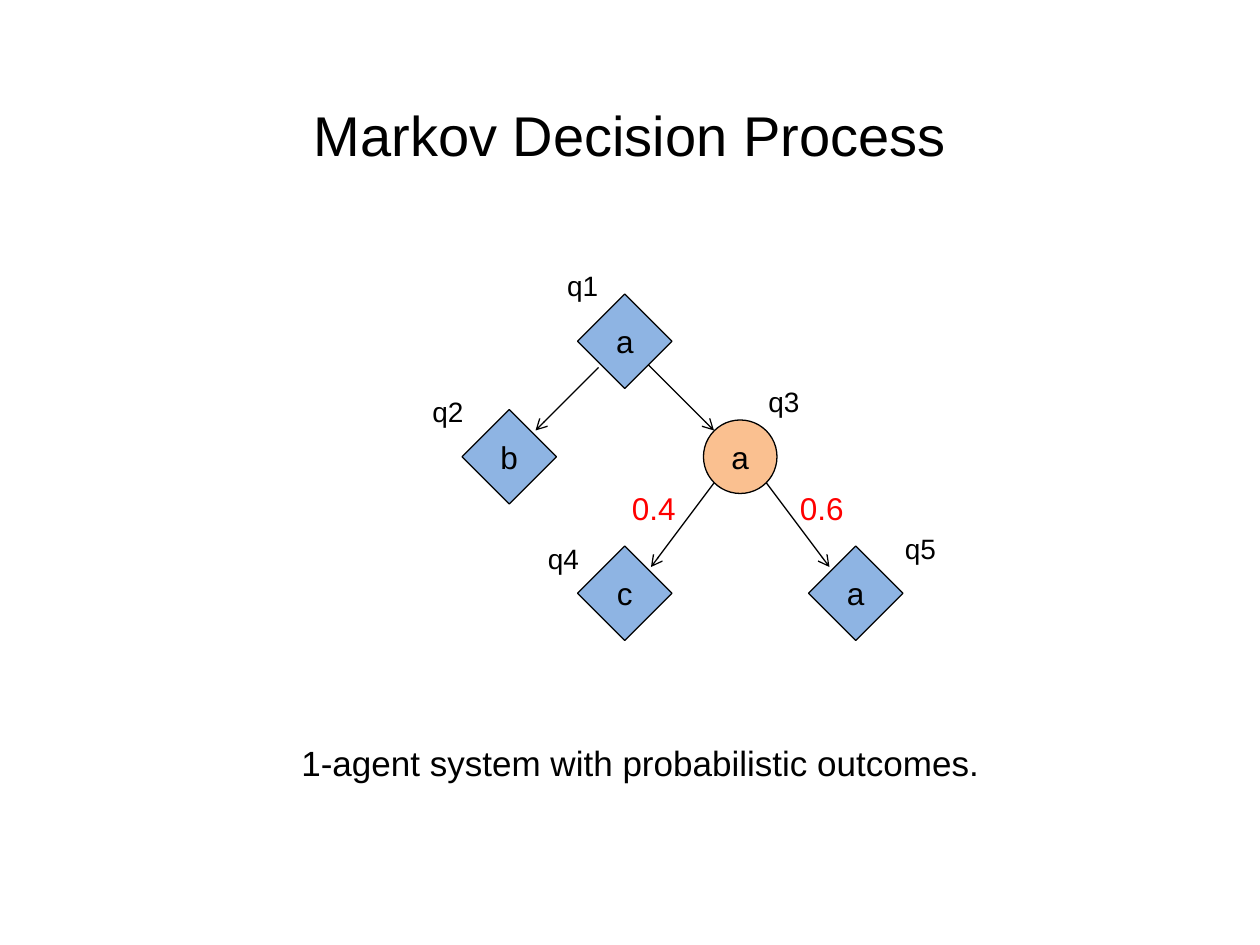
from dataclasses import dataclass

from lxml import etree
from pptx import Presentation
from pptx.dml.color import RGBColor
from pptx.enum.shapes import MSO_CONNECTOR, MSO_SHAPE
from pptx.enum.text import MSO_ANCHOR, MSO_AUTO_SIZE, PP_ALIGN
from pptx.oxml.ns import qn
from pptx.util import Inches, Pt

STRAIGHT = MSO_CONNECTOR.STRAIGHT
DIAMOND, CIRCLE = MSO_SHAPE.DIAMOND, MSO_SHAPE.OVAL
LEFT, CENTER = PP_ALIGN.LEFT, PP_ALIGN.CENTER
TOP, MIDDLE = MSO_ANCHOR.TOP, MSO_ANCHOR.MIDDLE
FIXED = MSO_AUTO_SIZE.NONE

COLUMNS, ROWS = 120, 90
CELL = Inches(10) / COLUMNS


@dataclass(frozen=True)
class Theme:
    font: str = "Arial"
    ink: str = "000000"
    decision: str = "8EB4E3"
    chance: str = "FAC090"
    probability: str = "FF0000"
    title_size: int = 32
    caption_size: int = 20
    node_size: int = 18
    state_size: int = 16
    line_width: float = 0.75


THEME = Theme()


@dataclass(frozen=True)
class Box:
    """An area in grid columns and rows."""
    left: float
    top: float
    width: float
    height: float

    def inner(self, column, row, width, height):
        return Box(self.left + column, self.top + row, width, height)

    def point(self, column, row):
        return cells(self.left + column, self.top + row)

    def place(self):
        return cells(self.left, self.top, self.width, self.height)


TITLE_BOX = Box(0, 9, COLUMNS, 7.7)
TREE_BOX = Box(40, 25, 52, 36)
CAPTION_BOX = Box(10, 70, 102, 5.3)

# state, action, shape, fill, size, centre, label corner, label alignment
NODES = [
    ("q1", "a", DIAMOND, THEME.decision, 9, (19.5, 7.5), (12, 0), CENTER),
    ("q2", "b", DIAMOND, THEME.decision, 9, (8.5, 18.5), (0, 12), LEFT),
    ("q3", "a", CIRCLE, THEME.chance, 7, (30.5, 18.5), (32, 11), LEFT),
    ("q4", "c", DIAMOND, THEME.decision, 9, (19.5, 31.5), (11, 26), LEFT),
    ("q5", "a", DIAMOND, THEME.decision, 9, (41.5, 31.5), (45, 25), LEFT),
]
TRANSITIONS = [
    ((17, 10), (11, 16)),
    ((21, 9), (28, 16)),
    ((28, 21), (22, 29)),
    ((33, 21), (39, 29)),
]
PROBABILITIES = [("0.4", (19, 21)), ("0.6", (35, 21))]


def cells(*counts):
    """Turn grid counts into slide lengths."""
    return [round(count * CELL) for count in counts]


def write(frame, text, size, color=THEME.ink, align=CENTER, anchor=TOP, wrap=True):
    frame_format = {"auto_size": FIXED, "word_wrap": wrap, "vertical_anchor": anchor}
    for name, value in frame_format.items():
        setattr(frame, name, value)
    paragraph = frame.paragraphs[0]
    paragraph.alignment = align
    run = paragraph.add_run()
    run.text = text
    for name, value in {"name": THEME.font, "size": Pt(size)}.items():
        setattr(run.font, name, value)
    run.font.color.rgb = RGBColor.from_string(color)


def add_text(slide, box, text, size, **text_format):
    write(slide.shapes.add_textbox(*box.place()).text_frame, text, size, **text_format)


def outline(line):
    line.color.rgb = RGBColor.from_string(THEME.ink)
    line.width = Pt(THEME.line_width)


def add_node(slide, box, shape, fill, action):
    node = slide.shapes.add_shape(shape, *box.place())
    node.shadow.inherit = False
    node.fill.solid()
    node.fill.fore_color.rgb = RGBColor.from_string(fill)
    outline(node.line)
    write(node.text_frame, action, THEME.node_size, anchor=MIDDLE, wrap=False)


def add_arrow(slide, start, end):
    arrow = slide.shapes.add_connector(STRAIGHT, *start, *end)
    outline(arrow.line)
    properties = arrow.element.spPr
    etree.SubElement(properties.find(qn("a:ln")), qn("a:tailEnd"), type="arrow")
    etree.SubElement(properties, qn("a:effectLst"))


def add_title(slide, box):
    title = slide.shapes.title
    title.left, title.top, title.width, title.height = box.place()
    write(title.text_frame, "Markov Decision Process", THEME.title_size)


def add_decision_tree(slide, box):
    for start, end in TRANSITIONS:
        add_arrow(slide, box.point(*start), box.point(*end))
    for probability, corner in PROBABILITIES:
        add_text(slide, box.inner(*corner, 8, 4.8), probability, THEME.node_size,
                 color=THEME.probability, align=LEFT)
    for state, action, shape, fill, size, (column, row), corner, align in NODES:
        node_box = box.inner(column - size / 2, row - size / 2, size, size)
        add_node(slide, node_box, shape, fill, action)
        add_text(slide, box.inner(*corner, 7, 4.4), state, THEME.state_size, align=align)


def add_caption(slide, box):
    add_text(slide, box, "1-agent system with probabilistic outcomes.", THEME.caption_size)


def main():
    deck = Presentation()
    deck.slide_width, deck.slide_height = cells(COLUMNS, ROWS)
    slide = deck.slides.add_slide(deck.slide_layouts.get_by_name("Title Only"))
    add_title(slide, TITLE_BOX)
    add_decision_tree(slide, TREE_BOX)
    add_caption(slide, CAPTION_BOX)
    deck.save("out.pptx")


if __name__ == "__main__":
    main()
